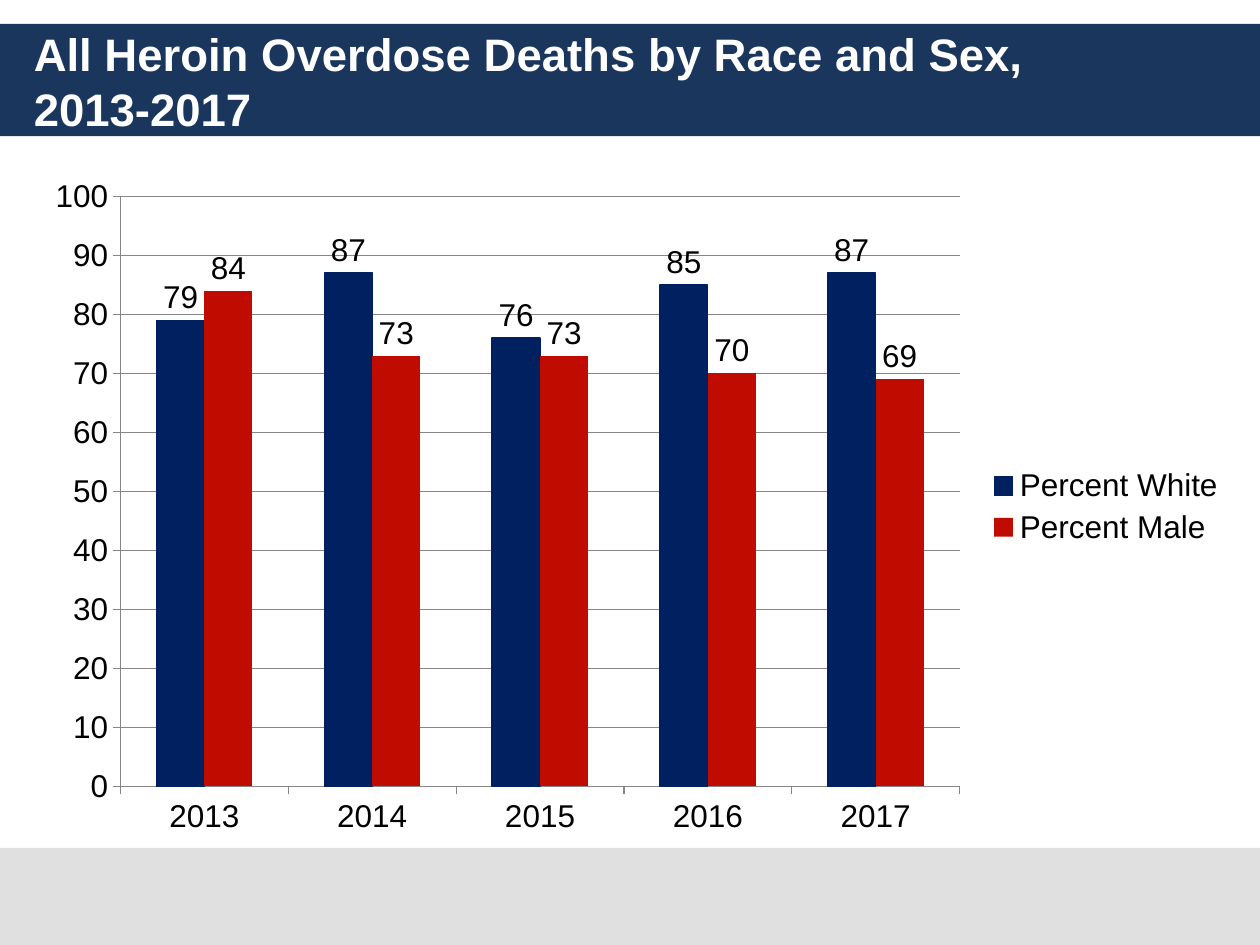
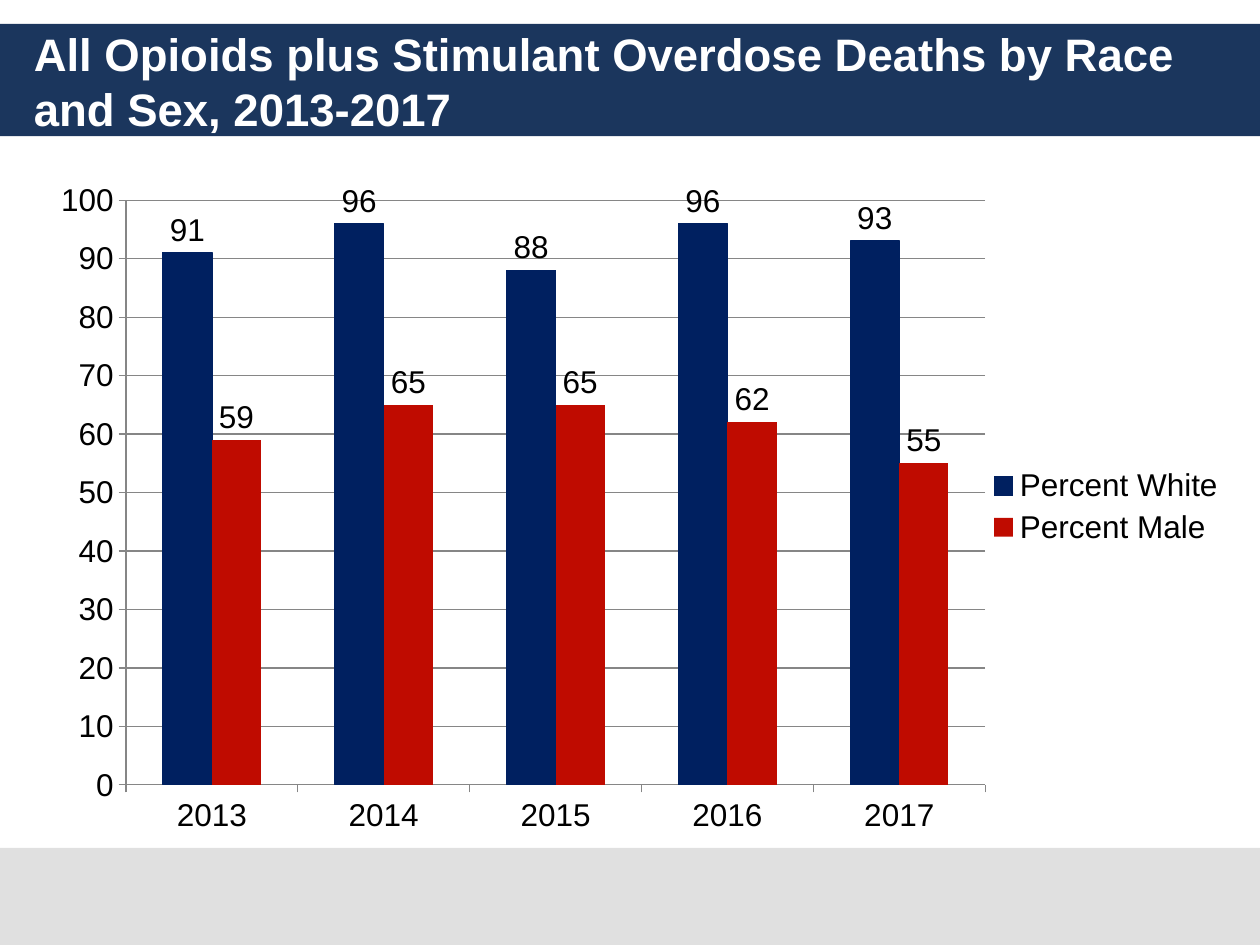
from lxml.etree import SubElement
from pptx import Presentation
from pptx.chart.data import CategoryChartData
from pptx.dml.color import RGBColor
from pptx.enum.chart import XL_CHART_TYPE, XL_LABEL_POSITION, XL_LEGEND_POSITION, XL_TICK_MARK
from pptx.enum.shapes import MSO_SHAPE
from pptx.enum.text import MSO_ANCHOR, PP_ALIGN
from pptx.oxml.ns import qn
from pptx.util import Inches, Pt

NAVY_BAND = RGBColor(0x1B, 0x36, 0x5D)
GREY_BAND = RGBColor(0xE0, 0xE0, 0xE0)
WHITE = RGBColor(0xFF, 0xFF, 0xFF)
BLACK = RGBColor(0, 0, 0)
GRID_GREY = RGBColor(0x86, 0x86, 0x86)
BAR_NAVY = RGBColor(0x00, 0x20, 0x60)
BAR_RED = RGBColor(0xBF, 0x0B, 0x00)
FONT = "Arial"
CHART_LEFT, CHART_TOP, CHART_WIDTH, CHART_HEIGHT = 0.25, 1.31, 9.58, 5.42
YEARS = ["2013", "2014", "2015", "2016", "2017"]


def add_band(page, top, height, color):
    band = page.shapes.add_shape(
        MSO_SHAPE.RECTANGLE, 0, Inches(top), Inches(10), Inches(height))
    band.shadow.inherit = False
    band.fill.solid()
    band.fill.fore_color.rgb = color
    band.line.fill.background()


def add_title(page, text):
    box = page.shapes.add_textbox(Inches(0.17), Inches(0.19), Inches(9.67), Inches(0.9))
    frame = box.text_frame
    frame.word_wrap = True
    frame.vertical_anchor = MSO_ANCHOR.MIDDLE
    para = frame.paragraphs[0]
    para.text = text
    para.alignment = PP_ALIGN.LEFT
    para.font.name = FONT
    para.font.size = Pt(26)
    para.font.bold = True
    para.font.color.rgb = WHITE


def style_line(line, color):
    line.color.rgb = color
    line.width = Pt(0.75)


def style_axis(axis):
    axis.major_tick_mark = XL_TICK_MARK.OUTSIDE
    axis.minor_tick_mark = XL_TICK_MARK.NONE
    style_line(axis.format.line, GRID_GREY)


def style_series(series, color):
    series.format.fill.solid()
    series.format.fill.fore_color.rgb = color
    series.invert_if_negative = False
    labels = series.data_labels
    labels.show_value = True
    labels.position = XL_LABEL_POSITION.OUTSIDE_END


def place_plot(chart, left, top, width, height):
    plot_area = chart.element.chart.plotArea
    for old_layout in plot_area.findall(qn("c:layout")):
        plot_area.remove(old_layout)
    layout = SubElement(plot_area, qn("c:layout"))
    plot_area.insert(0, layout)
    manual = SubElement(layout, qn("c:manualLayout"))
    settings = {
        "layoutTarget": "inner",
        "xMode": "edge",
        "yMode": "edge",
        "x": (left - CHART_LEFT) / CHART_WIDTH,
        "y": (top - CHART_TOP) / CHART_HEIGHT,
        "w": width / CHART_WIDTH,
        "h": height / CHART_HEIGHT,
    }
    for name, value in settings.items():
        SubElement(manual, qn(f"c:{name}")).set("val", str(value))


def add_percent_chart(page, white_percents, male_percents):
    data = CategoryChartData(number_format="0")
    data.categories = YEARS
    data.add_series("Percent White", white_percents)
    data.add_series("Percent Male", male_percents)
    chart = page.shapes.add_chart(
        XL_CHART_TYPE.COLUMN_CLUSTERED, Inches(CHART_LEFT), Inches(CHART_TOP),
        Inches(CHART_WIDTH), Inches(CHART_HEIGHT), data).chart
    chart.has_title = False
    chart.font.name = FONT
    chart.font.size = Pt(18)
    chart.font.color.rgb = BLACK
    chart.has_legend = True
    chart.legend.position = XL_LEGEND_POSITION.RIGHT
    chart.legend.include_in_layout = False

    style_axis(chart.category_axis)
    style_axis(chart.value_axis)
    chart.value_axis.minimum_scale = 0
    chart.value_axis.maximum_scale = 100
    chart.value_axis.major_unit = 10
    chart.value_axis.has_major_gridlines = True
    style_line(chart.value_axis.major_gridlines.format.line, GRID_GREY)

    plot = chart.plots[0]
    plot.gap_width = 150
    plot.overlap = 0
    plot.vary_by_categories = False
    white_series, male_series = plot.series
    style_series(white_series, BAR_NAVY)
    style_line(white_series.format.line, BAR_NAVY)
    style_series(male_series, BAR_RED)
    return chart


def add_page(deck, title, white_percents, male_percents):
    page = deck.slides.add_slide(deck.slide_layouts[6])
    add_band(page, 0.19, 0.89, NAVY_BAND)
    add_band(page, 6.73, 0.77, GREY_BAND)
    add_title(page, title)
    return add_percent_chart(page, white_percents, male_percents)


def main():
    deck = Presentation()
    deck.slide_width = Inches(10)
    deck.slide_height = Inches(7.5)
    add_page(deck, "All Heroin Overdose Deaths by Race and Sex,\v2013-2017",
             [79, 87, 76, 85, 87], [84, 73, 73, 70, 69])
    stimulant_chart = add_page(
        deck, "All Opioids plus Stimulant Overdose Deaths by Race and Sex, 2013-2017",
        [91, 96, 88, 96, 93], [59, 65, 65, 62, 55])
    place_plot(stimulant_chart, 1, 1.59, 6.82, 4.64)
    deck.save("out.pptx")


if __name__ == "__main__":
    main()
